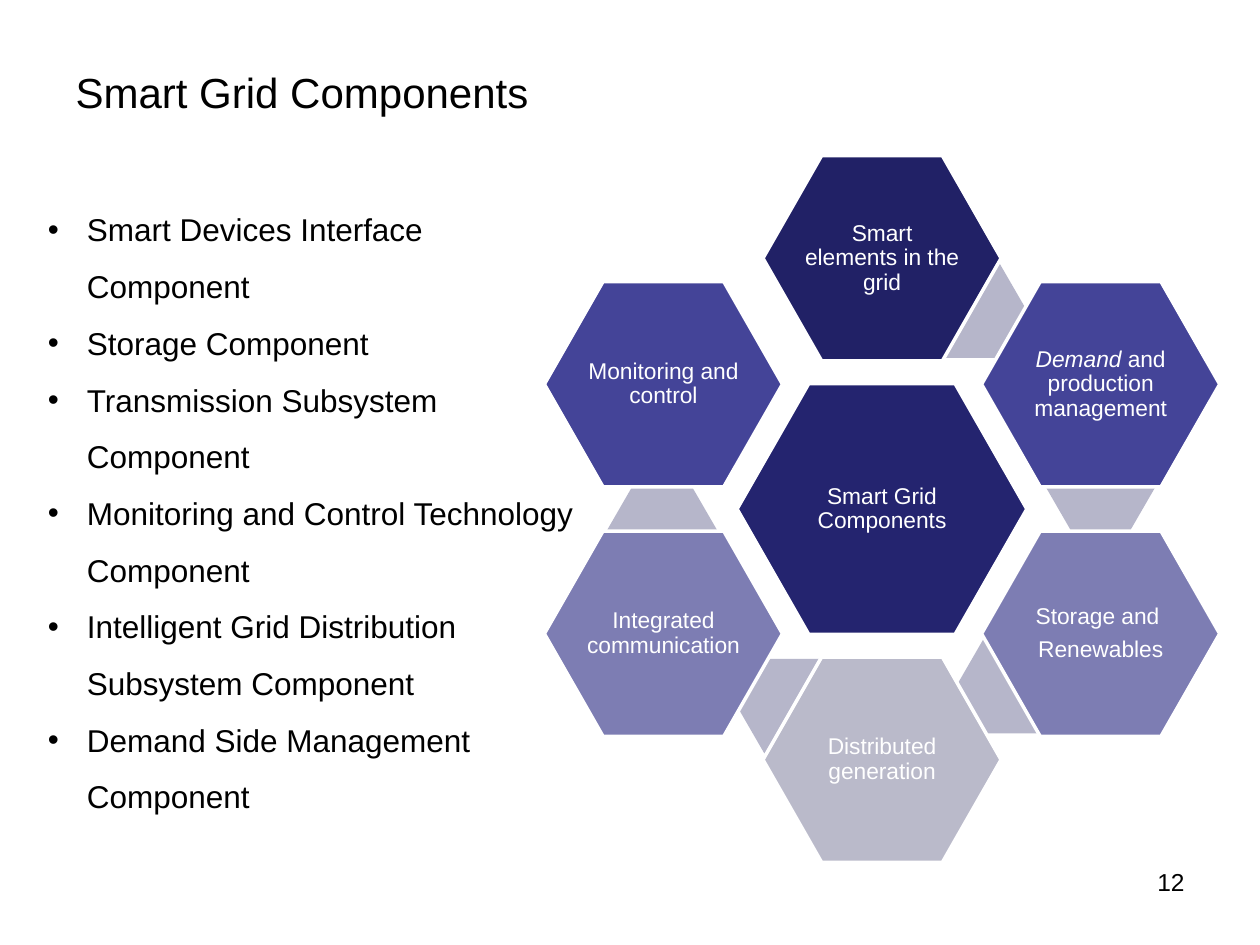
from dataclasses import dataclass
from typing import Optional

from lxml import etree
from pptx import Presentation, util as u
from pptx.dml.color import RGBColor
from pptx.enum import shapes, text
from pptx.oxml import ns


@dataclass(frozen=True)
class Theme:
    """Colours, font and type sizes of the slide."""
    font: str = "Arial"
    ink: str = "000000"
    paper: str = "FFFFFF"
    core: str = "24246F"
    link: str = "B6B6CA"
    navy: str = "212166"
    indigo: str = "444498"
    lavender: str = "7D7DB3"
    mist: str = "BABACA"
    title: int = 24
    body: int = 18
    number: int = 14
    label: int = 13


@dataclass(frozen=True)
class Cell:
    """One labelled hexagon, placed by columns and vertical offset from the centre."""
    column: int
    dy: float
    fill: str
    lines: tuple[str, ...]
    link: Optional[tuple[float, float]] = None
    italic_lead: str = ""
    size: tuple[float, float] = (1.89, 1.63)


THEME = Theme()
CENTRE = (7.0, 4.04)
COLUMN_STEP = 1.735
INNER, OUTER = 0.99, 1.99
LINK_SIZE = (0.87, 0.75)
BULLET_INDENT = 0.31

COMPONENTS = (
    "Smart Devices Interface Component",
    "Storage Component",
    "Transmission Subsystem Component",
    "Monitoring and Control Technology Component",
    "Intelligent Grid Distribution Subsystem Component",
    "Demand Side Management Component",
)
CELLS = (
    Cell(0, 0, THEME.core, ("Smart Grid Components",), size=(2.3, 1.99)),
    Cell(0, -OUTER, THEME.navy, ("Smart elements in the grid",), (7.28, 2.09)),
    Cell(1, -INNER, THEME.indigo, (" and production management",), (8.3, 3.49), "Demand"),
    Cell(1, INNER, THEME.lavender, ("Storage and ", "Renewables"), (7.59, 5.07)),
    Cell(0, OUTER, THEME.mist, ("Distributed generation",), (5.85, 5.23)),
    Cell(-1, INNER, THEME.lavender, ("Integrated communication",), (4.82, 3.83)),
    Cell(-1, -INNER, THEME.indigo, ("Monitoring and control",)),
)


def place(sp, left: float, top: float, width: float, height: float) -> None:
    """Move and size a shape in inches."""
    sp.left, sp.top = u.Inches(left), u.Inches(top)
    sp.width, sp.height = u.Inches(width), u.Inches(height)


def style(p, size: int, color: str, align=text.PP_ALIGN.LEFT) -> None:
    """Set a paragraph's font and alignment."""
    p.alignment = align
    p.font.name, p.font.size = THEME.font, u.Pt(size)
    p.font.color.rgb = RGBColor.from_string(color)


def add_hexagon(group, left: float, top: float, size: tuple[float, float],
                fill: str, adjust: float):
    """Draw a plain filled hexagon."""
    sp = group.shapes.add_shape(shapes.MSO_SHAPE.HEXAGON, u.Inches(left), u.Inches(top),
                                u.Inches(size[0]), u.Inches(size[1]))
    sp.adjustments[0] = adjust
    sp.shadow.inherit = False
    sp.fill.solid()
    sp.fill.fore_color.rgb = RGBColor.from_string(fill)
    sp.line.fill.background()
    return sp


def add_cell(group, cell: Cell) -> None:
    """Draw a labelled hexagon over its link piece."""
    if cell.link:
        add_hexagon(group, *cell.link, LINK_SIZE, THEME.link, 0.289)
    width, height = cell.size
    left = CENTRE[0] + cell.column * COLUMN_STEP - width / 2
    top = CENTRE[1] + cell.dy - height / 2
    sp = add_hexagon(group, left, top, cell.size, cell.fill, 0.286)
    sp.line.color.rgb = RGBColor.from_string(THEME.paper)
    sp.line.width = u.Pt(2)
    tf = sp.text_frame
    tf.word_wrap = True
    tf.vertical_anchor = text.MSO_ANCHOR.MIDDLE
    tf.margin_left = tf.margin_right = tf.margin_top = tf.margin_bottom = u.Inches(0.02)
    for i, line in enumerate(cell.lines):
        p = tf.paragraphs[0] if i == 0 else tf.add_paragraph()
        if cell.italic_lead:
            r = p.add_run()
            r.text, r.font.italic = cell.italic_lead, True
        p.add_run().text = line
        style(p, THEME.label, THEME.paper, text.PP_ALIGN.CENTER)
        p.line_spacing, p.space_after = 0.9, u.Pt(4.5)


def fill_title(sp) -> None:
    """Write the slide title."""
    place(sp, 0.5, 0.3, 9, 1.25)
    tf = sp.text_frame
    tf.text = "Smart Grid Components\v"
    tf.vertical_anchor = text.MSO_ANCHOR.MIDDLE
    style(tf.paragraphs[0], THEME.title, THEME.ink)


def fill_body(sp) -> None:
    """Write the bulleted list of components."""
    place(sp, 0.28, 1.47, 4.5, 6.01)
    tf = sp.text_frame
    tf.text = "\n".join(COMPONENTS)
    tf.auto_size = text.MSO_AUTO_SIZE.NONE
    tf.vertical_anchor = text.MSO_ANCHOR.TOP
    for p in tf.paragraphs:
        style(p, THEME.body, THEME.ink)
        p.line_spacing, p.space_before = 1.5, u.Pt(0)
        props = p._p.get_or_add_pPr()
        props.set("marL", str(u.Inches(BULLET_INDENT)))
        props.set("indent", str(-u.Inches(BULLET_INDENT)))
        bullet = etree.Element(ns.qn("a:buChar"), char="•")
        props.find(ns.qn("a:defRPr")).addprevious(bullet)


def add_number(s, number: str) -> None:
    """Write the page number."""
    sp = s.shapes.add_textbox(0, 0, 0, 0)
    place(sp, 7.17, 6.83, 2.33, 0.52)
    tf = sp.text_frame
    tf.word_wrap = True
    tf.text = number
    style(tf.paragraphs[0], THEME.number, THEME.ink, text.PP_ALIGN.RIGHT)


def main() -> None:
    """Build and save the slide."""
    prs = Presentation()
    prs.slide_width, prs.slide_height = u.Inches(10), u.Inches(7.5)
    s = prs.slides.add_slide(prs.slide_layouts[1])
    fill_title(s.shapes.title)
    fill_body(s.placeholders[1])
    group = s.shapes.add_group_shape()
    for cell in CELLS:
        add_cell(group, cell)
    add_number(s, "12")
    prs.save("out.pptx")


if __name__ == "__main__":
    main()
